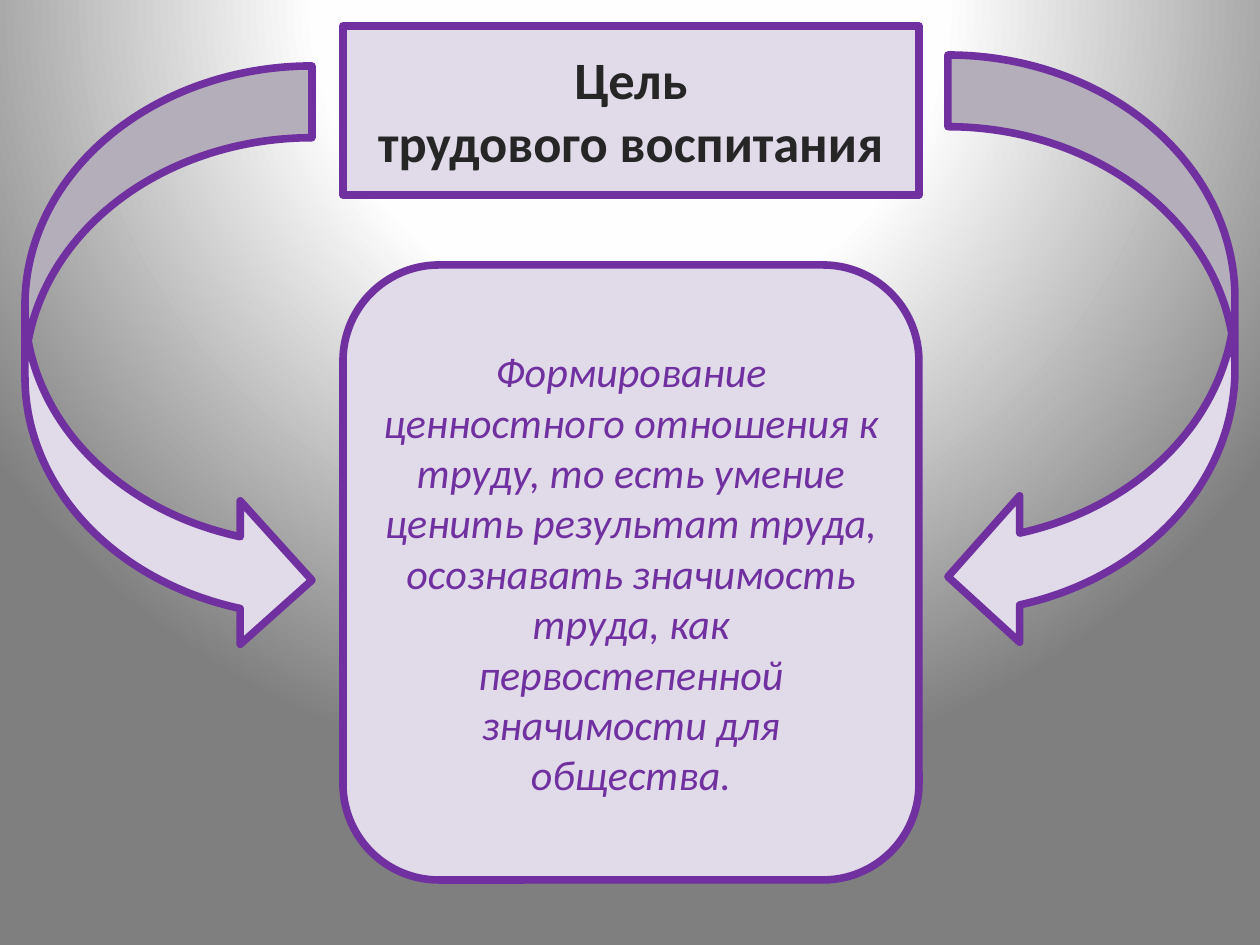
from lxml import etree
from pptx import Presentation
from pptx import util as u
from pptx.dml.color import RGBColor
from pptx.enum import shapes, text
from pptx.oxml import parse_xml
from pptx.oxml.ns import nsdecls, qn

PX = 914400 / 126
LILAC, PURPLE, DARK = "E0DAE9", "7030A0", "262626"
STOPS = [(0, "FFFFFF"), (40, "FEFEFE"), (100, "7F7F7F")]


def px(n):
    return u.Emu(round(n * PX))


def rgb(value):
    return RGBColor.from_string(value)


def set_background(s):
    """Radial gradient centred above the slide."""
    stops = "".join(
        f'<a:gs pos="{pos * 1000}"><a:srgbClr val="{color}"/></a:gs>'
        for pos, color in STOPS)
    s._element.cSld.insert(0, parse_xml(
        f'<p:bg {nsdecls("p", "a")}><p:bgPr><a:gradFill rotWithShape="1">'
        f'<a:gsLst>{stops}</a:gsLst><a:path path="circle">'
        '<a:fillToRect l="50000" t="-80000" r="50000" b="180000"/></a:path>'
        '</a:gradFill><a:effectLst/></p:bgPr></p:bg>'))


def paint(sp):
    sp.fill.solid()
    sp.fill.fore_color.rgb = rgb(LILAC)
    sp.line.color.rgb = rgb(PURPLE)
    sp.line.width = u.Pt(4.33)
    sp.shadow.inherit = False


def add_shape(s, kind, box):
    sp = s.shapes.add_shape(kind, *map(px, box))
    paint(sp)
    return sp


def write(sp, lines, size, color, bold=False, italic=False):
    tf = sp.text_frame
    tf.text = "\n".join(lines)
    tf.word_wrap = True
    tf.auto_size = text.MSO_AUTO_SIZE.NONE
    tf.vertical_anchor = text.MSO_ANCHOR.MIDDLE
    for p in tf.paragraphs:
        p.alignment = text.PP_ALIGN.CENTER
        f = p.font
        f.name, f.size, f.bold, f.italic = "Calibri", u.Pt(size), bold, italic
        f.color.rgb = rgb(color)


def add_title(s, box, lines):
    """Title placeholder with a rounded outline."""
    sp = s.shapes.title
    sp.left, sp.top, sp.width, sp.height = map(px, box)
    geom = etree.SubElement(sp._element.spPr, qn("a:prstGeom"), prst="roundRect")
    etree.SubElement(geom, qn("a:avLst"))
    paint(sp)
    write(sp, lines, 30, DARK, bold=True)


def main():
    prs = Presentation()
    prs.slide_width, prs.slide_height = px(1260), px(945)
    s = prs.slides.add_slide(prs.slide_layouts[5])
    set_background(s)
    kind = shapes.MSO_SHAPE

    # Arrows from the title to the goal
    add_shape(s, kind.CURVED_RIGHT_ARROW, (25, 66, 287, 586))
    left_arrow = add_shape(s, kind.CURVED_LEFT_ARROW, (948, 55, 287, 595))
    left_arrow.adjustments[1] = 0.51

    # Title and goal
    add_title(s, (343, 26, 576, 169), ["Цель", "трудового воспитания"])
    goal = add_shape(s, kind.ROUNDED_RECTANGLE, (343, 265, 576, 615))
    write(goal, ["Формирование ценностного отношения к труду, то есть умение "
                 "ценить результат труда, осознавать значимость труда, как "
                 "первостепенной значимости для общества."],
          24, PURPLE, italic=True)

    prs.save("out.pptx")


if __name__ == "__main__":
    main()
